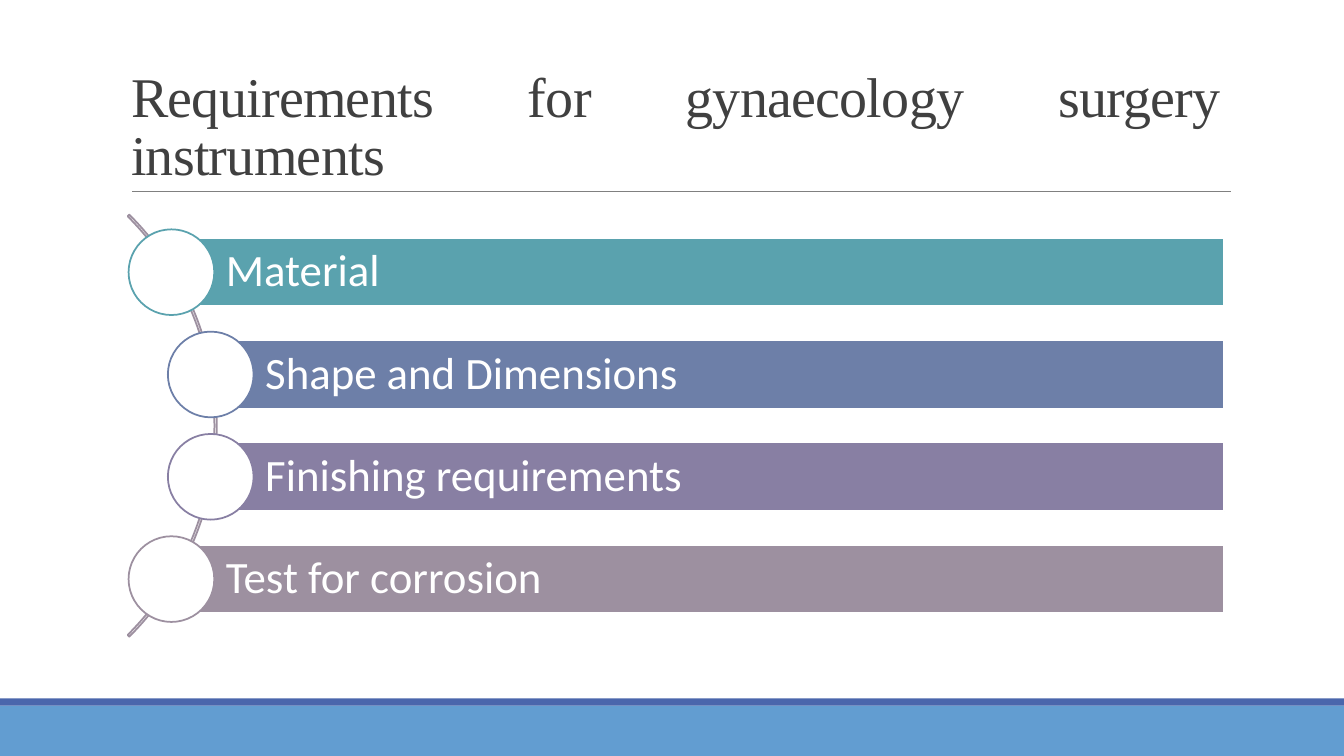
import pptx
import pptx.util
import pptx.dml.color
import pptx.enum.shapes
import pptx.enum.text

Inches, Pt = pptx.util.Inches, pptx.util.Pt
RGBColor = pptx.dml.color.RGBColor
MSO_SHAPE = pptx.enum.shapes.MSO_SHAPE
MSO_ANCHOR = pptx.enum.text.MSO_ANCHOR
PP_ALIGN = pptx.enum.text.PP_ALIGN

WHITE = RGBColor(0xFF, 0xFF, 0xFF)
DARK = RGBColor(0x40, 0x40, 0x40)
GREY = RGBColor(0x80, 0x80, 0x80)
BLUE = RGBColor(0x62, 0x9D, 0xD1)
INDIGO = RGBColor(0x4A, 0x66, 0xAC)
TEAL = RGBColor(0x5A, 0xA2, 0xAE)
SLATE = RGBColor(0x6D, 0x7F, 0xA8)
PURPLE = RGBColor(0x88, 0x7F, 0xA3)
MAUVE = RGBColor(0x9D, 0x90, 0xA0)

# Grid, in inches
WIDTH, HEIGHT = 13.33, 7.5
ROW_TOP, ROW_STEP = 2.7, 1.015      # centre of first row, distance between rows
BAR_H, BAR_RIGHT = 0.68, 12.14
CIRCLE = 0.85
ARC = 5.92
OUTER, INNER = 1.7, 2.09            # circle centres along the arc

ROWS = [
    ("Material", OUTER, TEAL),
    ("Shape and Dimensions", INNER, SLATE),
    ("Finishing requirements", INNER, PURPLE),
    ("Test for corrosion", OUTER, MAUVE),
]

prs = pptx.Presentation()
prs.slide_width, prs.slide_height = Inches(WIDTH), Inches(HEIGHT)
s = prs.slides.add_slide(prs.slide_layouts.get_by_name("Title Only"))


def add_box(kind, x, y, w, h, fill=None, line=None):
    sp = s.shapes.add_shape(kind, Inches(x), Inches(y), Inches(w), Inches(h))
    sp.shadow.inherit = False
    if fill is None:
        sp.fill.background()
    else:
        sp.fill.solid()
        sp.fill.fore_color.rgb = fill
    if line is None:
        sp.line.fill.background()
    else:
        sp.line.color.rgb = line
        sp.line.width = Pt(1.25)
    return sp


def write(tf, text, frame, para, font, color):
    tf.text = text
    p = tf.paragraphs[0]
    r = p.runs[0]
    for target, values in ((tf, frame), (p, para), (r.font, font)):
        for name, value in values.items():
            setattr(target, name, value)
    r.font.color.rgb = color
    return r


# Footer bands
add_box(MSO_SHAPE.RECTANGLE, 0, 7, WIDTH, 0.5, BLUE)
add_box(MSO_SHAPE.RECTANGLE, 0, 6.93, WIDTH, 0.07, INDIGO)

# Title and the rule below it
rule = s.shapes.add_connector(pptx.enum.shapes.MSO_CONNECTOR.STRAIGHT,
                              Inches(1.31), Inches(1.9), Inches(12.21), Inches(1.9))
rule.line.color.rgb = GREY
rule.line.width = Pt(0.5)
rule._element.spPr.append(pptx.oxml.parse_xml(
    '<a:effectLst xmlns:a="http://schemas.openxmlformats.org/drawingml/2006/main"/>'))

title = s.shapes.title
for name, value in dict(left=1.2, top=0.31, width=11, height=1.59).items():
    setattr(title, name, Inches(value))
r = write(title.text_frame, "Requirements for gynaecology surgery instruments",
          dict(vertical_anchor=MSO_ANCHOR.BOTTOM, word_wrap=True,
               auto_size=pptx.enum.text.MSO_AUTO_SIZE.NONE),
          dict(alignment=PP_ALIGN.JUSTIFY, line_spacing=0.85),
          dict(size=Pt(40), name="Times New Roman"), DARK)
r.font._element.set("spc", "-50")

# Arc behind the list, centred on the four rows
middle = ROW_TOP + ROW_STEP * (len(ROWS) - 1) / 2
arc = add_box(MSO_SHAPE.BLOCK_ARC, -3.77, middle - ARC / 2, ARC, ARC, line=MAUVE)
for i, value in enumerate((189, 27, 0.004)):
    arc.adjustments[i] = value

# Bars with a circle centred on each left end
for i, (text, x, color) in enumerate(ROWS):
    y = ROW_TOP + i * ROW_STEP
    bar = add_box(MSO_SHAPE.RECTANGLE, x, y - BAR_H / 2, BAR_RIGHT - x, BAR_H, color, WHITE)
    write(bar.text_frame, text,
          dict(vertical_anchor=MSO_ANCHOR.MIDDLE, word_wrap=True, margin_left=Inches(0.54),
               margin_right=Inches(0.09), margin_top=Inches(0.09), margin_bottom=Inches(0.09)),
          dict(alignment=PP_ALIGN.LEFT, line_spacing=0.9),
          dict(size=Pt(32), name="Calibri"), WHITE)
    add_box(MSO_SHAPE.OVAL, x - CIRCLE / 2, y - CIRCLE / 2, CIRCLE, CIRCLE, WHITE, color)

prs.save("out.pptx")
